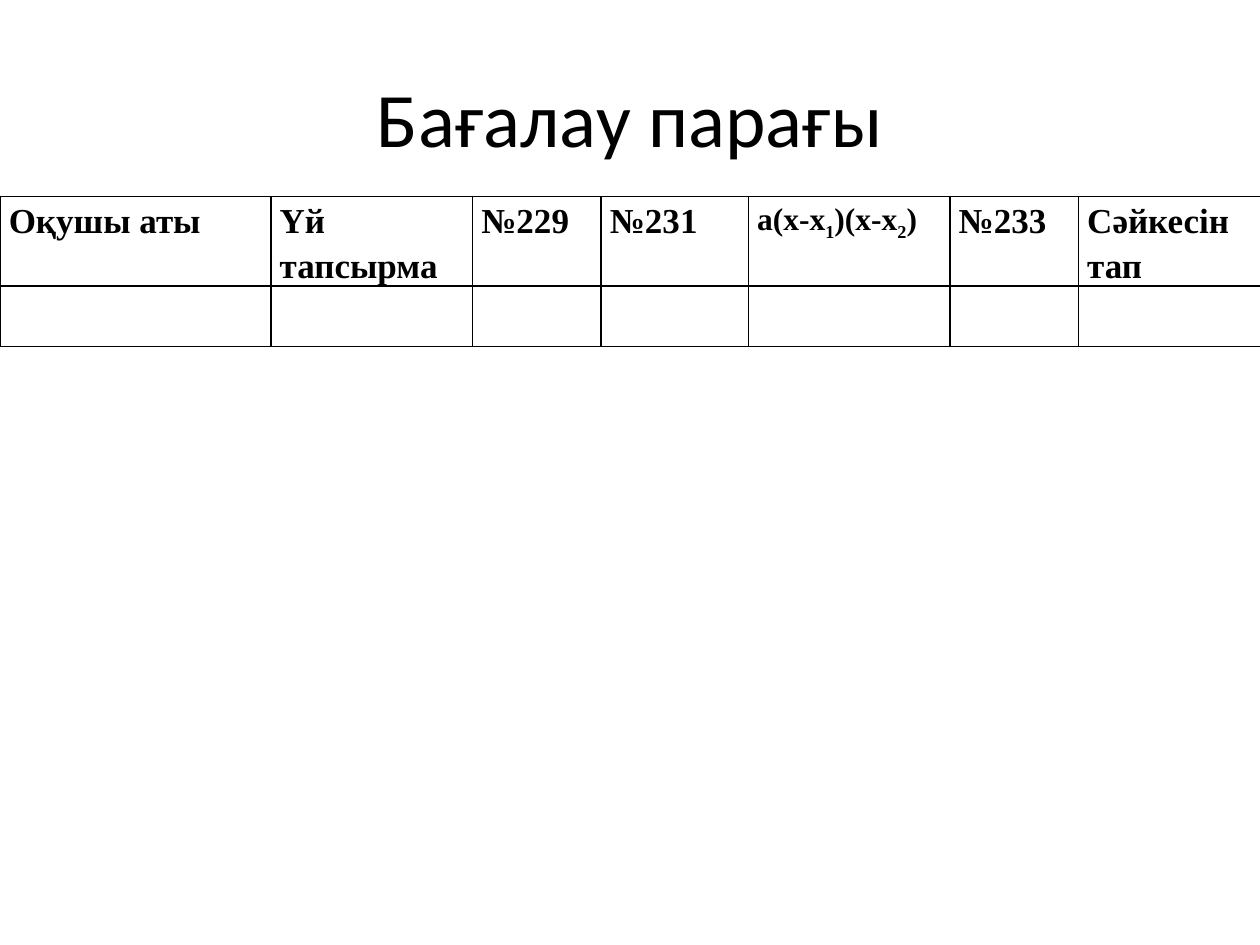
from dataclasses import dataclass

import lxml.etree
import pptx
import pptx.dml.color
import pptx.enum.text
import pptx.oxml.ns
import pptx.table
import pptx.util
from pptx.util import Inches


@dataclass(frozen=True)
class Theme:
    ink: str = "000000"
    paper: str = "FFFFFF"
    title_font: str = "Calibri"
    table_font: str = "Times New Roman"
    title_size: int = 44
    header_size: int = 20
    formula_size: int = 18
    border: float = 1
    subscript: int = -25000


@dataclass(frozen=True)
class Column:
    width: float
    # Odd-numbered runs are subscripts
    runs: tuple[str, ...]
    size: int


THEME = Theme()
COLUMNS = [
    Column(2.15, ("Оқушы аты",), THEME.header_size),
    Column(1.6, ("Үй тапсырма",), THEME.header_size),
    Column(1.02, ("№229",), THEME.header_size),
    Column(1.17, ("№231",), THEME.header_size),
    Column(1.6, ("а(х-х", "1", ")(х-х", "2", ")"), THEME.formula_size),
    Column(1.02, ("№233",), THEME.header_size),
    Column(1.45, ("Сәйкесін тап",), THEME.header_size),
]
ROW_HEIGHTS = (0.55, 0.48)


def add_run(p, text: str, font: str, size: int, bold: bool = False):
    r = p.add_run()
    r.text = text
    r.font.name = font
    r.font.size = pptx.util.Pt(size)
    r.font.bold = bold
    r.font.color.rgb = pptx.dml.color.RGBColor.from_string(THEME.ink)
    return r


def style_cell(cell: pptx.table._Cell) -> None:
    """Give a cell its margins, white fill and four black borders."""
    cell.margin_left = cell.margin_right = Inches(0.07)
    cell.margin_top = cell.margin_bottom = 0
    cell.fill.solid()
    cell.fill.fore_color.rgb = pptx.dml.color.RGBColor.from_string(THEME.paper)
    qn = pptx.oxml.ns.qn
    tc_pr = cell._tc.get_or_add_tcPr()
    for i, side in enumerate(("a:lnL", "a:lnR", "a:lnT", "a:lnB")):
        ln = lxml.etree.Element(qn(side), w=str(pptx.util.Pt(THEME.border)))
        fill = lxml.etree.SubElement(ln, qn("a:solidFill"))
        lxml.etree.SubElement(fill, qn("a:srgbClr"), val=THEME.ink)
        tc_pr.insert(i, ln)


def write_header(cell: pptx.table._Cell, column: Column) -> None:
    p = cell.text_frame.paragraphs[0]
    p.alignment = pptx.enum.text.PP_ALIGN.LEFT
    p.line_spacing = 1.15
    for i, text in enumerate(column.runs):
        r = add_run(p, text, THEME.table_font, column.size, bold=True)
        if i % 2:
            r.font._element.set("baseline", str(THEME.subscript))


def add_score_table(s, columns: list[Column]) -> None:
    frame = s.shapes.add_table(
        len(ROW_HEIGHTS), len(columns), Inches(0), Inches(1.56),
        Inches(10), Inches(sum(ROW_HEIGHTS)))
    table = frame.table
    table.first_row = table.horz_banding = False
    for row, height in zip(table.rows, ROW_HEIGHTS):
        row.height = Inches(height)
    for i, column in enumerate(columns):
        table.columns[i].width = Inches(column.width)
        write_header(table.cell(0, i), column)
    for cell in table.iter_cells():
        style_cell(cell)


def add_title(s, text: str) -> None:
    sp = s.shapes.title
    sp.left, sp.top = Inches(0.5), Inches(0.3)
    sp.width, sp.height = Inches(9), Inches(1.25)
    tf = sp.text_frame
    tf.vertical_anchor = pptx.enum.text.MSO_ANCHOR.MIDDLE
    p = tf.paragraphs[0]
    p.alignment = pptx.enum.text.PP_ALIGN.CENTER
    add_run(p, text, THEME.title_font, THEME.title_size)


def main() -> None:
    prs = pptx.Presentation()
    prs.slide_width, prs.slide_height = Inches(10), Inches(7.5)
    # Title-only layout
    s = prs.slides.add_slide(prs.slide_layouts[5])
    add_title(s, "Бағалау парағы")
    # Score sheet with an empty row to fill in
    add_score_table(s, COLUMNS)
    prs.save("out.pptx")


if __name__ == "__main__":
    main()
